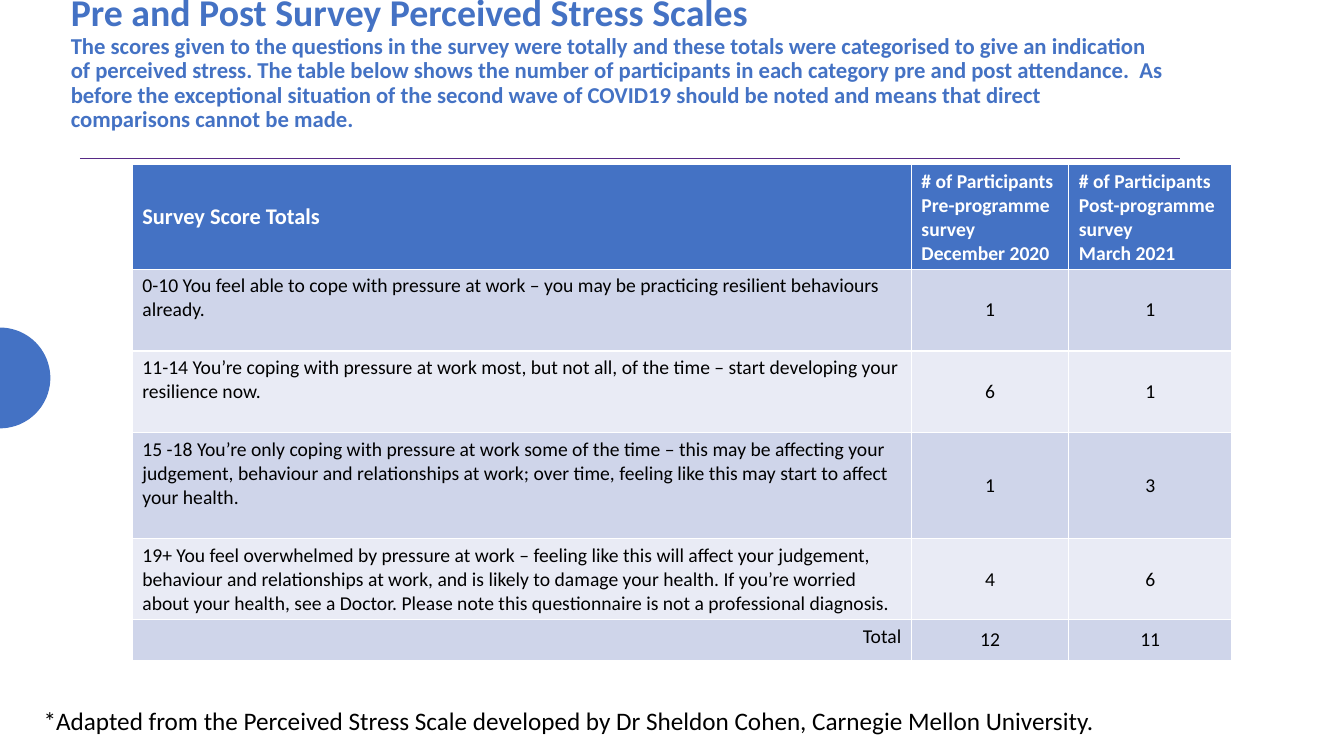
from math import cos, pi, sin

from lxml import etree
from pptx import Presentation
from pptx.dml.color import RGBColor
from pptx.enum.shapes import MSO_CONNECTOR
from pptx.enum.text import MSO_ANCHOR as ANCHOR, PP_ALIGN as ALIGN
from pptx.oxml.ns import qn
from pptx.util import Pt

PX = 9525  # EMU per pixel, 96 pixels to the inch
BLUE, PURPLE, WHITE, BLACK = "4472C4", "572A86", "FFFFFF", "000000"
BANDS = ["E9EBF5", "CFD5EA"]


def rgb(value):
    return RGBColor.from_string(value)


def add_run(p, text, size, color, bold=False):
    r = p.add_run()
    r.text = text
    for name, value in {"name": "Calibri", "size": Pt(size), "bold": bold}.items():
        setattr(r.font, name, value)
    r.font.color.rgb = rgb(color)


prs = Presentation()
prs.slide_width, prs.slide_height = 1280 * PX, 720 * PX
s = prs.slides.add_slide(prs.slide_layouts[6])

# Half disc on the left edge
radius, middle, steps = 48, 360, 40
angles = [pi * i / steps - pi / 2 for i in range(steps + 1)]
points = [(radius * cos(a) * PX, (middle + radius * sin(a)) * PX) for a in angles]
builder = s.shapes.build_freeform(*points[0])
builder.add_line_segments(points[1:], close=True)
half_disc = builder.convert_to_shape()
half_disc.shadow.inherit = False
half_disc.fill.solid()
half_disc.fill.fore_color.rgb = rgb(BLUE)
half_disc.line.fill.background()

# Rule under the title
rule = s.shapes.add_connector(MSO_CONNECTOR.STRAIGHT, 76 * PX, 151 * PX, 1124 * PX, 151 * PX)
rule.line.color.rgb = rgb(PURPLE)
rule.line.width = Pt(0.5)
etree.SubElement(rule._element.spPr, qn("a:effectLst"))

# Title and introduction
tf = s.shapes.add_textbox(58 * PX, 13 * PX, 1061 * PX, 94 * PX).text_frame
tf.word_wrap = True
tf.vertical_anchor = ANCHOR.MIDDLE
p = tf.paragraphs[0]
p.line_spacing = 0.9
add_run(p, "Pre and Post Survey Perceived Stress Scales", 27, BLUE, True)
p.add_line_break()
add_run(
    p,
    "The scores given to the questions in the survey were totally and these totals were "
    "categorised to give an indication of perceived stress. The table below shows the number of "
    "participants in each category pre and post attendance.  As before the exceptional situation "
    "of the second wave of COVID19 should be noted and means that direct comparisons cannot be made.",
    16.2, BLUE, True,
)

# Score table
rows = [
    ("Survey Score Totals",
     "# of Participants Pre-programme survey December 2020",
     "# of Participants Post-programme survey\nMarch 2021"),
    ("0-10 You feel able to cope with pressure at work – you may be practicing resilient "
     "behaviours already.", "1", "1"),
    ("11-14 You’re coping with pressure at work most, but not all, of the time – start "
     "developing your resilience now.", "6", "1"),
    ("15 -18 You’re only coping with pressure at work some of the time – this may be affecting "
     "your judgement, behaviour and relationships at work; over time, feeling like this may "
     "start to affect your health.", "1", "3"),
    ("19+ You feel overwhelmed by pressure at work – feeling like this will affect your "
     "judgement, behaviour and relationships at work, and is likely to damage your health. If "
     "you’re worried about your health, see a Doctor. Please note this questionnaire is not a "
     "professional diagnosis.", "4", "6"),
    ("Total", "12", "11"),
]
widths = [742, 150, 155]
heights = [99, 78, 78, 101, 77, 39]
table = s.shapes.add_table(
    len(rows), len(widths), 126 * PX, 157 * PX, sum(widths) * PX, sum(heights) * PX
).table
for column, width in zip(table.columns, widths):
    column.width = width * PX
for row, height in zip(table.rows, heights):
    row.height = height * PX

for i, texts in enumerate(rows):
    header = i == 0
    for j, text in enumerate(texts):
        cell = table.cell(i, j)
        cell.fill.solid()
        cell.fill.fore_color.rgb = rgb(BLUE if header else BANDS[i % 2])
        centred = header == (j == 0)
        cell.vertical_anchor = ANCHOR.MIDDLE if centred else ANCHOR.TOP
        for k, line in enumerate(text.split("\n")):
            p = cell.text_frame.paragraphs[0] if k == 0 else cell.text_frame.add_paragraph()
            if j and not header:
                p.alignment = ALIGN.CENTER
            elif text == "Total":
                p.alignment = ALIGN.RIGHT
            add_run(p, line, 16 if header and j == 0 else 14, WHITE if header else BLACK, header)

# Source note
tf = s.shapes.add_textbox(32 * PX, 667 * PX, 1032 * PX, 38 * PX).text_frame
tf.word_wrap = False
add_run(
    tf.paragraphs[0],
    "*Adapted from the Perceived Stress Scale developed by Dr Sheldon Cohen, "
    "Carnegie Mellon University.",
    18, BLACK,
)

prs.save("out.pptx")
